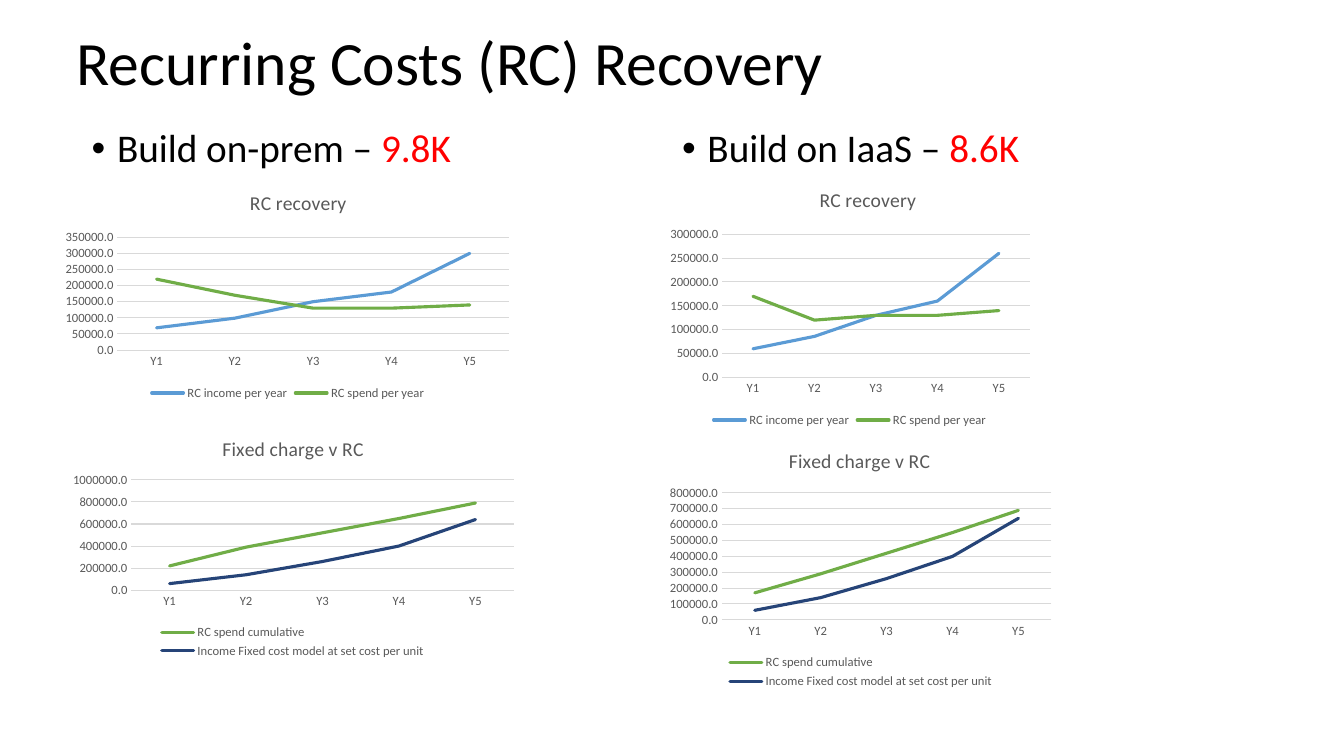
from dataclasses import dataclass

from lxml import etree
from pptx import Presentation
from pptx.chart.data import CategoryChartData
from pptx.dml.color import RGBColor
from pptx.enum.chart import XL_CHART_TYPE, XL_LEGEND_POSITION, XL_MARKER_STYLE, XL_TICK_MARK
from pptx.enum.text import MSO_ANCHOR
from pptx.oxml.ns import qn
from pptx.util import Cm, Pt

LINE = XL_CHART_TYPE.LINE
BOTTOM = XL_LEGEND_POSITION.BOTTOM
NO_MARKER = XL_MARKER_STYLE.NONE
NO_TICK = XL_TICK_MARK.NONE
MIDDLE = MSO_ANCHOR.MIDDLE
TOP = MSO_ANCHOR.TOP


@dataclass(frozen=True)
class Theme:
    font: str = "Calibri"
    black: str = "000000"
    red: str = "FF0000"
    grey: str = "595959"
    grid: str = "D9D9D9"
    income: str = "5B9BD5"
    spend: str = "70AD47"
    fixed: str = "264478"
    title_size: float = 44
    bullet_size: float = 28
    chart_title_size: float = 14
    chart_size: float = 10
    label_size: float = 9
    series_width: float = 2.25
    grid_width: float = 0.75


THEME = Theme()
YEARS = ["Y1", "Y2", "Y3", "Y4", "Y5"]
FIXED_INCOME = [60000, 140000, 260000, 400000, 640000]


def style_font(font, size, color):
    font.name = THEME.font
    font.size = Pt(size)
    font.bold = False
    font.color.rgb = RGBColor.from_string(color)


def style_line(line, color, width):
    line.color.rgb = RGBColor.from_string(color)
    line.width = Pt(width)


def add_text(page, place, spans, size, anchor=TOP, bullet=False):
    box = page.shapes.add_textbox(*(Cm(length) for length in place))
    frame = box.text_frame
    frame.word_wrap = True
    frame.vertical_anchor = anchor
    para = frame.paragraphs[0]
    if bullet:
        properties = para._p.get_or_add_pPr()
        properties.set("marL", str(Cm(0.64)))
        properties.set("indent", str(-Cm(0.64)))
        etree.SubElement(properties, qn("a:buFont")).set("typeface", "Arial")
        etree.SubElement(properties, qn("a:buChar")).set("char", "•")
    para.line_spacing = 0.9
    for text, color in spans:
        span = para.add_run()
        span.text = text
        style_font(span.font, size, color)


def set_layout(parent, position, fractions, inner=False):
    for old in parent.findall(qn("c:layout")):
        parent.remove(old)
    layout = etree.Element(qn("c:layout"))
    manual = etree.SubElement(layout, qn("c:manualLayout"))
    settings = [("layoutTarget", "inner")] if inner else []
    settings += [("xMode", "edge"), ("yMode", "edge")]
    settings += zip("xywh", fractions)
    for name, value in settings:
        etree.SubElement(manual, qn(f"c:{name}")).set("val", str(value))
    parent.insert(position, layout)


def style_axes(chart, top, step):
    for axis in (chart.category_axis, chart.value_axis):
        axis.major_tick_mark = NO_TICK
        axis.minor_tick_mark = NO_TICK
        style_font(axis.tick_labels.font, THEME.label_size, THEME.grey)
    style_line(chart.category_axis.format.line, THEME.grid, THEME.grid_width)
    values = chart.value_axis
    values.format.line.fill.background()
    values.minimum_scale = 0
    values.maximum_scale = top
    values.major_unit = step
    values.tick_labels.number_format = "0.0"
    values.tick_labels.number_format_is_linked = False
    values.has_major_gridlines = True
    style_line(values.major_gridlines.format.line, THEME.grid, THEME.grid_width)


def add_line_chart(page, place, title, title_spot, plot_area, scale, series):
    data = CategoryChartData(number_format="0.0")
    data.categories = YEARS
    for name, values, color in series:
        data.add_series(name, values)
    chart = page.shapes.add_chart(LINE, *(Cm(length) for length in place), data).chart
    style_font(chart.font, THEME.chart_size, THEME.black)

    chart.has_title = True
    span = chart.chart_title.text_frame.paragraphs[0].add_run()
    span.text = title
    style_font(span.font, THEME.chart_title_size, THEME.grey)
    chart.chart_title.include_in_layout = False
    set_layout(chart.chart_title._element, 1, title_spot)

    chart.has_legend = True
    chart.legend.position = BOTTOM
    chart.legend.include_in_layout = False
    style_font(chart.legend.font, THEME.label_size, THEME.grey)

    style_axes(chart, *scale)
    plot = chart.plots[0]
    plot.vary_by_categories = False
    set_layout(plot._element.getparent(), 0, plot_area, inner=True)
    for line, (name, values, color) in zip(plot.series, series):
        line.smooth = False
        line.marker.style = NO_MARKER
        style_line(line.format.line, color, THEME.series_width)
        line._element.find(qn("c:spPr")).find(qn("a:ln")).set("cap", "rnd")


def add_recovery_chart(page, place, title_spot, plot_area, scale, income, spend):
    series = [
        ("RC income per year", income, THEME.income),
        ("RC spend per year", spend, THEME.spend),
    ]
    add_line_chart(page, place, "RC recovery", title_spot, plot_area, scale, series)


def add_fixed_charge_chart(page, place, title_spot, plot_area, scale, spend):
    series = [
        ("RC spend cumulative", spend, THEME.spend),
        ("Income Fixed cost model at set cost per unit", FIXED_INCOME, THEME.fixed),
    ]
    add_line_chart(page, place, "Fixed charge v RC", title_spot, plot_area, scale, series)


def main():
    deck = Presentation()
    deck.slide_width = Cm(33.87)
    deck.slide_height = Cm(19.05)
    page = deck.slides.add_slide(deck.slide_layouts[6])

    add_text(page, (1.68, 0.48, 30.05, 2.36),
             [("Recurring Costs (RC) Recovery", THEME.black)], THEME.title_size, MIDDLE)
    for left, option, cost in ((2.06, "Build on-prem – ", "9.8K"),
                               (16.94, "Build on IaaS – ", "8.6K")):
        add_text(page, (left, 3.12, 14.88, 14.05),
                 [(option, THEME.black), (cost, THEME.red)], THEME.bullet_size, bullet=True)

    add_recovery_chart(page, (1.45, 4.5, 11.61, 5.69), (0.41, 0.03),
                       (0.13, 0.26, 0.85, 0.5), (350000, 50000),
                       [69000, 99000, 150000, 180000, 300000],
                       [220000, 170000, 130000, 130000, 140000])
    add_fixed_charge_chart(page, (1.57, 10.64, 11.61, 6.05), (0.34, 0.04),
                           (0.15, 0.24, 0.83, 0.46), (1000000, 200000),
                           [220000, 390000, 520000, 650000, 790000])
    add_recovery_chart(page, (16.69, 4.42, 9.45, 6.45), (0.41, 0.03),
                       (0.16, 0.23, 0.82, 0.56), (300000, 50000),
                       [60000, 86000, 130000, 160000, 260000],
                       [170000, 120000, 130000, 130000, 140000])
    add_fixed_charge_chart(page, (16.69, 10.92, 10.01, 6.53), (0.31, 0.04),
                           (0.15, 0.23, 0.83, 0.49), (800000, 100000),
                           [170000, 290000, 420000, 550000, 690000])
    deck.save("out.pptx")


if __name__ == "__main__":
    main()
